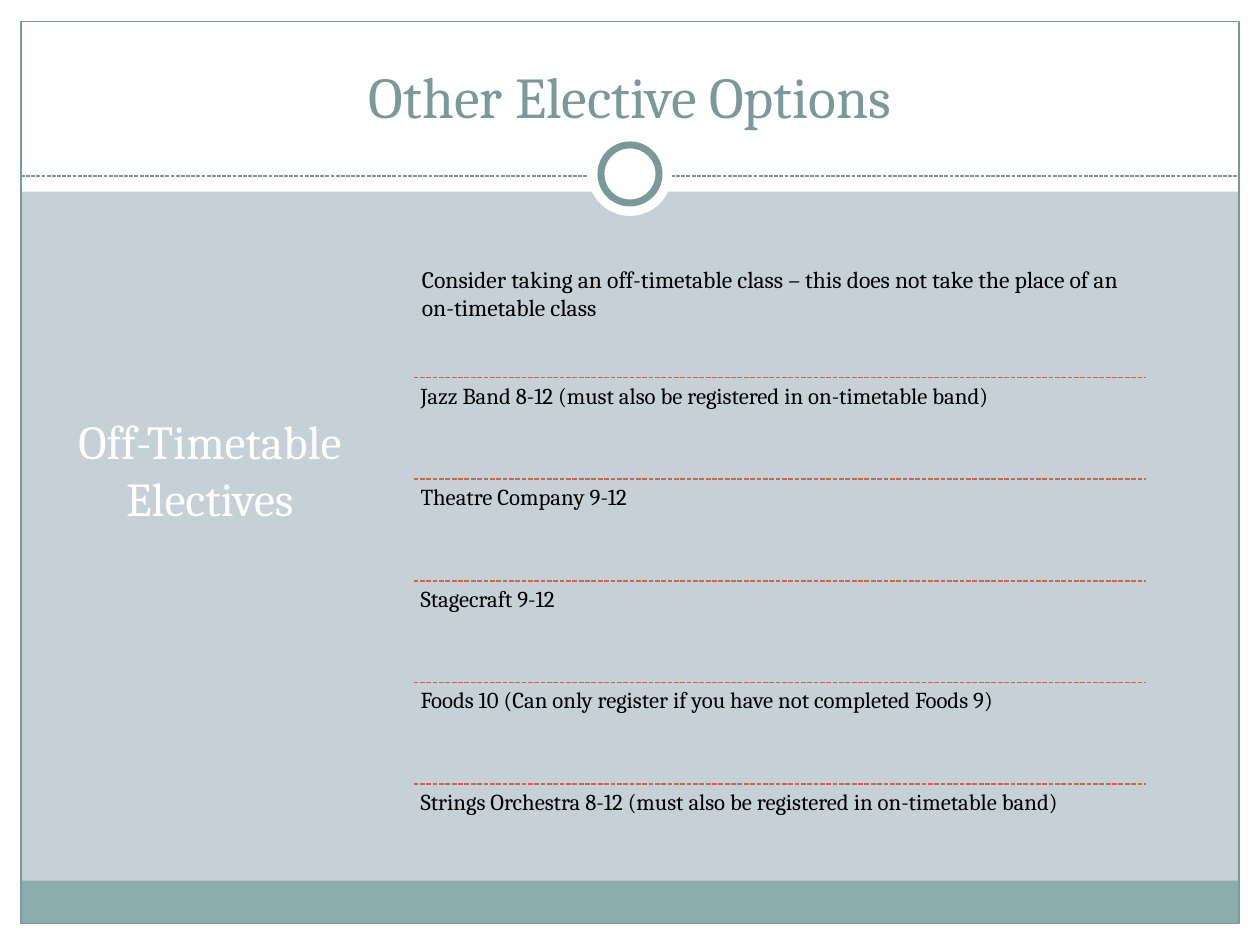
from lxml import etree
from pptx import Presentation
from pptx import util as u
from pptx.dml import color
from pptx.enum import dml, shapes, text
from pptx.oxml import ns

WHITE, TEAL, ORANGE, BLACK = "FFFFFF", "7C999A", "D16349", "000000"
FONT = "Cambria"
ELECTIVES = [
    "Jazz Band 8-12 (must also be registered in on-timetable band)",
    "Theatre Company 9-12",
    "Stagecraft 9-12",
    "Foods 10 (Can only register if you have not completed Foods 9)",
    "Strings Orchestra 8-12 (must also be registered in on-timetable band)",
]


def rgb(value):
    return color.RGBColor.from_string(value)


def apply(target, values):
    for name, value in values.items():
        setattr(target, name, value)


def points(*lengths):
    return [u.Pt(length) for length in lengths]


def add_panel(slide, box, fill=None, line=None, width=0.75,
              kind=shapes.MSO_SHAPE.RECTANGLE):
    panel = slide.shapes.add_shape(kind, *points(*box))
    panel.shadow.inherit = False
    if fill:
        panel.fill.solid()
        panel.fill.fore_color.rgb = rgb(fill)
    else:
        panel.fill.background()
    if line:
        panel.line.color.rgb = rgb(line)
        panel.line.width = u.Pt(width)
    else:
        panel.line.fill.background()


def add_rule(slide, left, right, y, line, width):
    rule = slide.shapes.add_connector(
        shapes.MSO_CONNECTOR.STRAIGHT, *points(left, y, right, y))
    rule.line.color.rgb = rgb(line)
    apply(rule.line, {"width": u.Pt(width),
                      "dash_style": dml.MSO_LINE.SQUARE_DOT})
    etree.SubElement(rule._element.spPr, ns.qn("a:effectLst"))


def add_label(slide, box, wording, size, ink, frame_format=None, paragraph_format=None):
    frame = slide.shapes.add_textbox(*points(*box)).text_frame
    apply(frame, {"word_wrap": True, **(frame_format or {})})
    paragraph = frame.paragraphs[0]
    apply(paragraph, paragraph_format or {})
    run = paragraph.add_run()
    run.text = wording
    apply(run.font, {"name": FONT, "size": u.Pt(size)})
    run.font.color.rgb = rgb(ink)


def add_frame(slide):
    for band in [(0, 528, 720, 12), (0, 0, 720, 109.5),
                 (0, 0, 12, 540), (708, 0, 12, 540)]:
        add_panel(slide, band, WHITE)
    add_panel(slide, (12, 503.2, 696, 24.5), "8CADAE")
    add_panel(slide, (12, 12.2, 696, 515.5), line=TEAL)
    add_rule(slide, 12, 708, 100.6, TEAL, 0.75)
    oval = shapes.MSO_SHAPE.OVAL
    add_panel(slide, (336, 75.4, 48, 48), WHITE, kind=oval)
    add_panel(slide, (343.4, 82.8, 33.2, 33.2), WHITE, TEAL, 4, oval)


def add_electives(slide):
    left, top, width, step = 236.4, 215.8, 418.3, 58.05
    margins = {f"margin_{side}": u.Pt(3.9)
               for side in ("left", "top", "right", "bottom")}
    for row, elective in enumerate(ELECTIVES):
        y = top + row * step
        add_rule(slide, left, left + width, y, ORANGE, 0.9)
        add_label(slide, (left, y, width, step), elective, 13, BLACK,
                  margins, {"line_spacing": 0.9})


def main():
    deck = Presentation()
    apply(deck, {"slide_width": u.Pt(720), "slide_height": u.Pt(540)})
    slide = deck.slides.add_slide(deck.slide_layouts[6])
    slide.background.fill.solid()
    slide.background.fill.fore_color.rgb = rgb("C5D1D7")

    centred = {"alignment": text.PP_ALIGN.CENTER}
    add_frame(slide)
    add_label(slide, (28.8, 98, 182.2, 340.6), "Off-Timetable Electives", 27, WHITE,
              {"vertical_anchor": text.MSO_ANCHOR.MIDDLE}, centred)
    add_electives(slide)
    add_label(slide, (234, 147.6, 423.4, 40.3),
              "Consider taking an off-timetable class – this does not take "
              "the place of an on-timetable class", 13.5, BLACK)
    add_label(slide, (24, 18, 672, 60), "Other Elective Options", 33, TEAL,
              {"vertical_anchor": text.MSO_ANCHOR.BOTTOM}, centred)
    deck.save("out.pptx")


if __name__ == "__main__":
    main()
